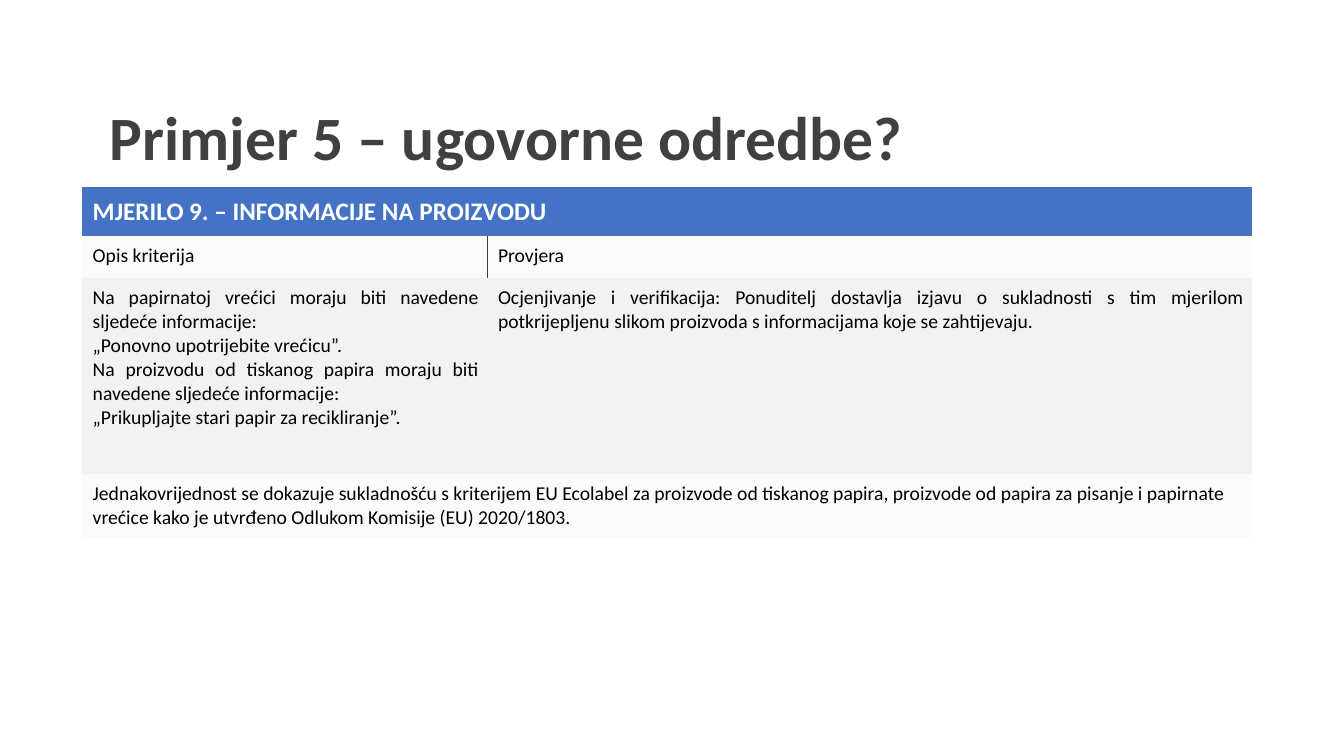
from dataclasses import dataclass

from lxml import etree
from pptx import Presentation
from pptx.dml.color import RGBColor
from pptx.enum.text import MSO_ANCHOR, PP_ALIGN
from pptx.oxml.ns import qn
from pptx.util import Inches, Pt

LEFT, JUSTIFY = PP_ALIGN.LEFT, PP_ALIGN.JUSTIFY
TOP, MIDDLE = MSO_ANCHOR.TOP, MSO_ANCHOR.MIDDLE


@dataclass(frozen=True)
class Theme:
    font: str = "Calibri"
    dark: str = "404040"
    black: str = "000000"
    white: str = "FFFFFF"
    header: str = "4472C4"
    band: str = "F2F2F2"
    title_size: int = 44
    header_size: int = 18
    body_size: int = 14


theme = Theme()


def add_run(p, text, size, color, bold):
    r = p.add_run()
    r.text = text
    r.font.name = theme.font
    r.font.size = Pt(size)
    r.font.bold = bold
    r.font.color.rgb = RGBColor.from_string(color)


def set_borders(cell, ruled_side):
    """Clear all four borders, then rule one side ("L" or "R") if given."""
    tc_pr = cell._tc.get_or_add_tcPr()
    for i, side in enumerate("LRTB"):
        ln = etree.Element(qn(f"a:ln{side}"))
        if side == ruled_side:
            ln.set("w", str(Pt(0.5)))
            fill = etree.SubElement(ln, qn("a:solidFill"))
            etree.SubElement(fill, qn("a:srgbClr"), val=theme.dark)
        else:
            etree.SubElement(ln, qn("a:noFill"))
        tc_pr.insert(i, ln)


prs = Presentation()
prs.slide_width, prs.slide_height = Inches(13.33), Inches(7.5)
s = prs.slides.add_slide(prs.slide_layouts[5])

title = s.shapes.title
title.left, title.top = Inches(0.99), Inches(0.85)
title.width, title.height = Inches(11.2), Inches(1.09)
tf = title.text_frame
tf.word_wrap = True
tf.vertical_anchor = MIDDLE
p = tf.paragraphs[0]
p.alignment = LEFT
p.line_spacing = 0.9
add_run(p, "Primjer 5 – ugovorne odredbe?", theme.title_size, theme.dark, True)

col_widths = [4.02, 7.59]
row_heights = [0.48, 0.42, 1.94, 0.63]
criteria = [
    [["MJERILO 9. – INFORMACIJE NA PROIZVODU"], []],
    [["Opis kriterija"], ["Provjera"]],
    [
        [
            "Na papirnatoj vrećici moraju biti navedene sljedeće informacije:",
            "„Ponovno upotrijebite vrećicu”.",
            "Na proizvodu od tiskanog papira moraju biti navedene sljedeće informacije:",
            "„Prikupljajte stari papir za recikliranje”.",
        ],
        [
            "Ocjenjivanje i verifikacija: Ponuditelj dostavlja izjavu o sukladnosti "
            "s tim mjerilom potkrijepljenu slikom proizvoda s informacijama koje se "
            "zahtijevaju."
        ],
    ],
    [
        [
            "Jednakovrijednost se dokazuje sukladnošću s kriterijem EU Ecolabel za "
            "proizvode od tiskanog papira, proizvode od papira za pisanje i papirnate "
            "vrećice kako je utvrđeno Odlukom Komisije (EU) 2020/1803."
        ],
        [],
    ],
]
HEADER_ROW, LABEL_ROW, DETAIL_ROW, NOTE_ROW = range(4)

table = s.shapes.add_table(
    len(row_heights), len(col_widths), Inches(0.81), Inches(1.86),
    Inches(sum(col_widths)), Inches(sum(row_heights)),
).table
for col, width in zip(table.columns, col_widths):
    col.width = Inches(width)
for row, height in zip(table.rows, row_heights):
    row.height = Inches(height)
for i in (HEADER_ROW, NOTE_ROW):
    table.cell(i, 0).merge(table.cell(i, 1))

for i, row in enumerate(criteria):
    is_header = i == HEADER_ROW
    size = theme.header_size if is_header else theme.body_size
    color = theme.white if is_header else theme.black
    for j, lines in enumerate(row):
        cell = table.cell(i, j)
        cell.margin_left = Inches(0.11)
        cell.margin_right = cell.margin_top = cell.margin_bottom = Inches(0.08)
        cell.vertical_anchor = MIDDLE if is_header else TOP
        cell.fill.solid()
        cell.fill.fore_color.rgb = RGBColor.from_string(
            theme.header if is_header else theme.band)
        if i in (LABEL_ROW, NOTE_ROW):
            clr = cell._tc.tcPr.find(".//" + qn("a:srgbClr"))
            etree.SubElement(clr, qn("a:alpha"), val="30000")
        set_borders(cell, "RL"[j] if i == LABEL_ROW else None)
        tf = cell.text_frame
        for k, line in enumerate(lines):
            p = tf.add_paragraph() if k else tf.paragraphs[0]
            p.alignment = JUSTIFY if i == DETAIL_ROW else LEFT
            add_run(p, line, size, color, is_header)

prs.save("out.pptx")
